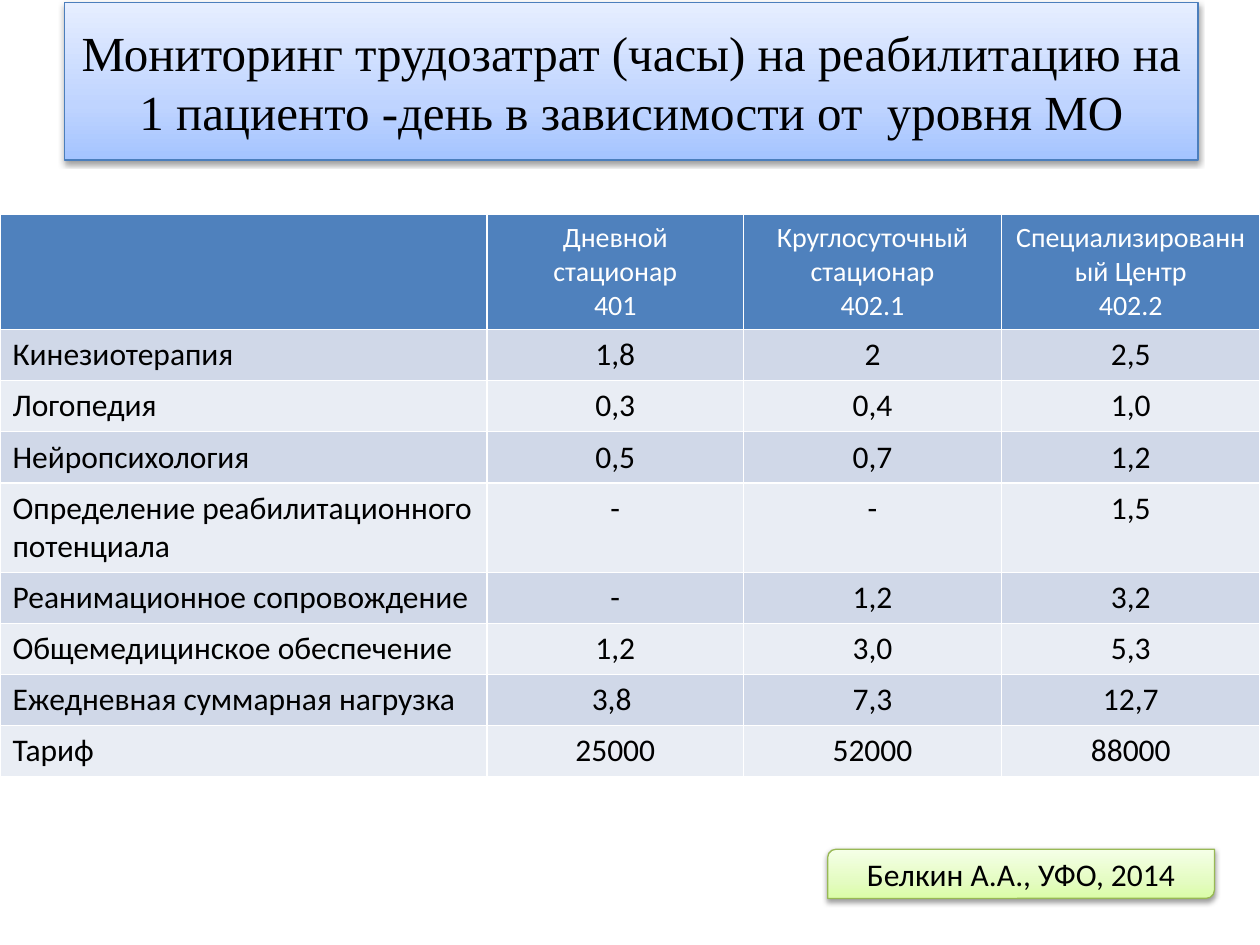
from lxml import etree
from pptx import Presentation
from pptx import util as u
from pptx.dml import color
from pptx.enum import shapes, text
from pptx.oxml import ns

HEADERS = [
    [],
    ["Дневной стационар", "401"],
    ["Круглосуточный стационар", "402.1"],
    ["Специализированный Центр", "402.2"],
]
ROWS = [
    ["Кинезиотерапия", "1,8", "2", "2,5"],
    ["Логопедия", "0,3", "0,4", "1,0"],
    ["Нейропсихология", "0,5", "0,7", "1,2"],
    ["Определение реабилитационного потенциала", "-", "-", "1,5"],
    ["Реанимационное сопровождение", "-", "1,2", "3,2"],
    ["Общемедицинское обеспечение", "1,2", "3,0", "5,3"],
    ["Ежедневная суммарная нагрузка", "3,8 ", "7,3", "12,7"],
    ["Тариф", "25000", "52000", "88000"],
]
COLUMN_WIDTHS = [278.4, 146.4, 147.6, 147.6]
ROW_HEIGHT = 29.2
BLUE_GRADIENT = [(0, "A4C4FF"), (35, "BFD4FF"), (100, "E6EEFF")]
GREEN_GRADIENT = [(0, "DAFDA7"), (35, "E4FCC2"), (100, "F5FFE7")]


def rgb(value):
    return color.RGBColor.from_string(value)


def add_xml(parent, tag, **attributes):
    return etree.SubElement(parent, ns.qn(tag), {key: str(value) for key, value in attributes.items()})


class SlideBuilder:
    """Holds the style and the current slide, and adds each kind of element."""

    body_font = "Calibri"
    title_font = "Times New Roman"
    ink = "000000"
    header_ink = "FFFFFF"
    header_fill = "4F81BD"
    band_fills = ("D0D8E8", "E9EDF4")

    def __init__(self, presentation):
        self.slide = presentation.slides.add_slide(presentation.slide_layouts[6])

    def add_lines(self, frame, lines, size, ink, font, centred=True):
        for index, line in enumerate(lines):
            paragraph = frame.add_paragraph() if index else frame.paragraphs[0]
            paragraph.alignment = text.PP_ALIGN.CENTER if centred else text.PP_ALIGN.LEFT
            run = paragraph.add_run()
            run.text = line
            run.font.name = font
            run.font.size = u.Pt(size)
            run.font.bold = False
            run.font.color.rgb = rgb(ink)

    def gradient(self, shape, stops):
        shape.fill.gradient()
        shape.fill.gradient_angle = 90
        stop_list = shape.element.spPr.find(".//" + ns.qn("a:gsLst"))
        for stop in list(stop_list):
            stop_list.remove(stop)
        for position, value in stops:
            stop = add_xml(stop_list, "a:gs", pos=position * 1000)
            add_xml(stop, "a:srgbClr", val=value)

    def shadow(self, shape):
        shape.shadow.inherit = False
        effects = shape.element.spPr.find(ns.qn("a:effectLst"))
        outer = add_xml(effects, "a:outerShdw", blurRad=u.Pt(3.1), dist=u.Pt(1.6), dir=5400000, rotWithShape=0)
        shade = add_xml(outer, "a:srgbClr", val="000000")
        add_xml(shade, "a:alpha", val=38000)

    def panel(self, kind, box, stops, line, words, size, font):
        shape = self.slide.shapes.add_shape(kind, *map(u.Pt, box))
        self.gradient(shape, stops)
        shape.line.color.rgb = rgb(line)
        shape.line.width = u.Pt(0.75)
        self.shadow(shape)
        frame = shape.text_frame
        frame.word_wrap = True
        frame.vertical_anchor = text.MSO_ANCHOR.MIDDLE
        self.add_lines(frame, [words], size, self.ink, font)

    def cell(self, cell, lines, fill, size, ink, centred=True):
        cell.fill.solid()
        cell.fill.fore_color.rgb = rgb(fill)
        self.add_lines(cell.text_frame, lines, size, ink, self.body_font, centred)

    def table(self, left, top, headers, rows, widths, height):
        count = len(rows) + 1
        table = self.slide.shapes.add_table(
            count, len(widths), u.Pt(left), u.Pt(top), u.Pt(sum(widths)), u.Pt(height * count)
        ).table
        for column, width in zip(table.columns, widths):
            column.width = u.Pt(width)
        for row in table.rows:
            row.height = u.Pt(height)
        for column, lines in enumerate(headers):
            self.cell(table.cell(0, column), lines, self.header_fill, 16, self.header_ink)
        for index, values in enumerate(rows):
            fill = self.band_fills[index % 2]
            for column, value in enumerate(values):
                self.cell(table.cell(index + 1, column), [value], fill, 18, self.ink, column > 0)


def main():
    presentation = Presentation()
    presentation.slide_width = u.Pt(720)
    presentation.slide_height = u.Pt(540)
    builder = SlideBuilder(presentation)
    builder.panel(
        shapes.MSO_SHAPE.RECTANGLE, (36.7, 1.4, 648, 90), BLUE_GRADIENT, "4B7EBC",
        "Мониторинг трудозатрат (часы) на реабилитацию на 1 пациенто -день в зависимости от  уровня МО",
        28, builder.title_font,
    )
    builder.table(0, 122.4, HEADERS, ROWS, COLUMN_WIDTHS, ROW_HEIGHT)
    builder.panel(
        shapes.MSO_SHAPE.ROUND_2_DIAG_RECTANGLE, (473, 485.3, 221, 28.1), GREEN_GRADIENT, "98B955",
        "Белкин А.А., УФО, 2014", 18, builder.body_font,
    )
    presentation.save("out.pptx")


if __name__ == "__main__":
    main()
